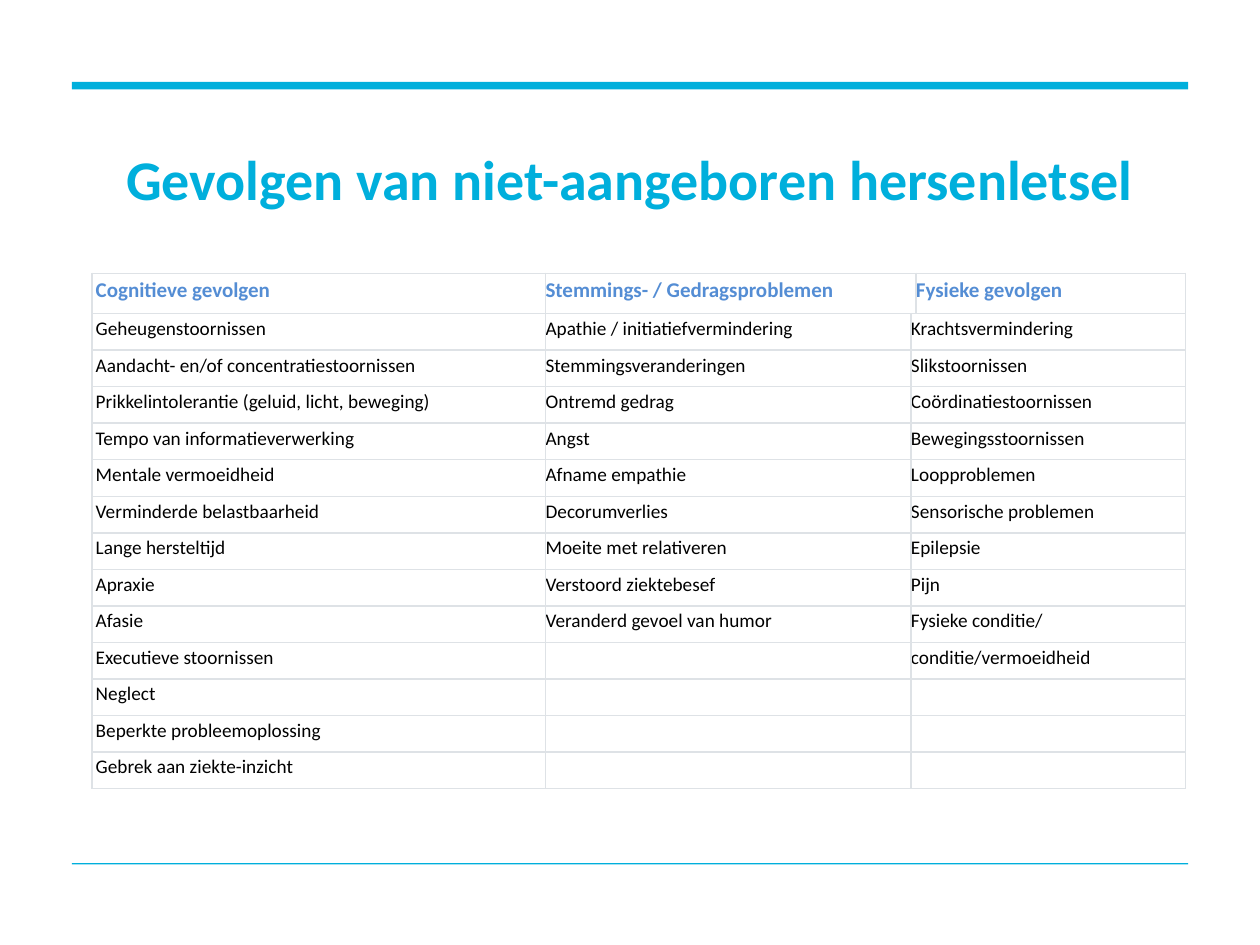
from itertools import zip_longest

from lxml.etree import SubElement
from pptx import Presentation
from pptx.dml.color import RGBColor
from pptx.enum.shapes import MSO_SHAPE as SHAPE
from pptx.enum.text import MSO_ANCHOR as ANCHOR, PP_ALIGN as ALIGN
from pptx.oxml.ns import qn
from pptx.util import Inches, Pt

CYAN = RGBColor(0x00, 0xAF, 0xDC)
BLUE = RGBColor(0x54, 0x8D, 0xD4)
BLACK = RGBColor(0x00, 0x00, 0x00)
WHITE = RGBColor(0xFF, 0xFF, 0xFF)
GRID = RGBColor(0xDE, 0xE2, 0xE6)
FONT = "Calibri"
LEFT, WIDTH = 0.57, 8.86
COL_WIDTHS = [3.6, 2.9, 0.04, 2.14]
HEAD_HEIGHT, ROW_HEIGHT = 0.32, 0.29
INDENT = 0.03

HEADINGS = ["Cognitieve gevolgen", "Stemmings- / Gedragsproblemen", "Fysieke gevolgen"]
COGNITIVE = [
    "Geheugenstoornissen",
    "Aandacht- en/of concentratiestoornissen",
    "Prikkelintolerantie (geluid, licht, beweging)",
    "Tempo van informatieverwerking",
    "Mentale vermoeidheid",
    "Verminderde belastbaarheid",
    "Lange hersteltijd",
    "Apraxie",
    "Afasie",
    "Executieve stoornissen",
    "Neglect",
    "Beperkte probleemoplossing",
    "Gebrek aan ziekte-inzicht",
]
BEHAVIOUR = [
    "Apathie / initiatiefvermindering",
    "Stemmingsveranderingen",
    "Ontremd gedrag",
    "Angst",
    "Afname empathie",
    "Decorumverlies",
    "Moeite met relativeren",
    "Verstoord ziektebesef",
    "Veranderd gevoel van humor",
]
PHYSICAL = [
    "Krachtsvermindering",
    "Slikstoornissen",
    "Coördinatiestoornissen",
    "Bewegingsstoornissen",
    "Loopproblemen",
    "Sensorische problemen",
    "Epilepsie",
    "Pijn",
    "Fysieke conditie/",
    "conditie/vermoeidheid",
]


def add_bar(slide, top, height):
    s = slide.shapes.add_shape(
        SHAPE.RECTANGLE, Inches(LEFT), Inches(top), Inches(WIDTH), Inches(height)
    )
    s.shadow.inherit = False
    s.fill.solid()
    s.fill.fore_color.rgb = CYAN
    s.line.fill.background()


def add_run(p, text, size, color, bold):
    r = p.add_run()
    r.text = text
    r.font.name = FONT
    r.font.size = Pt(size)
    r.font.bold = bold
    r.font.color.rgb = color


def set_title(slide, text):
    s = slide.shapes.title
    s.left, s.top, s.width, s.height = map(Inches, (LEFT, 1.1, WIDTH, 0.58))
    tf = s.text_frame
    tf.margin_left = tf.margin_right = tf.margin_top = tf.margin_bottom = 0
    tf.vertical_anchor = ANCHOR.MIDDLE
    tf.word_wrap = True
    p = tf.paragraphs[0]
    p.alignment = ALIGN.CENTER
    p.line_spacing = Pt(42)
    add_run(p, text, 32, CYAN, True)


def style_cell(cell):
    cell.margin_left = cell.margin_right = cell.margin_top = cell.margin_bottom = 0
    tc_pr = cell._tc.get_or_add_tcPr()
    for side in ("L", "R", "T", "B"):
        ln = SubElement(tc_pr, qn(f"a:ln{side}"), w=str(Pt(1)))
        solid = SubElement(ln, qn("a:solidFill"))
        SubElement(solid, qn("a:srgbClr"), val=str(GRID))
    cell.fill.solid()
    cell.fill.fore_color.rgb = WHITE


def fill_cell(cell, text, size, color, bold):
    p = cell.text_frame.paragraphs[0]
    if text:
        p.line_spacing = 1.15
        p.space_after = Pt(10)
        add_run(p, text, size, color, bold)
    else:
        SubElement(p._p, qn("a:endParaRPr"), sz=str(size * 100))


def add_effects_table(slide):
    rows = [HEADINGS, *zip_longest(COGNITIVE, BEHAVIOUR, PHYSICAL, fillvalue="")]
    heights = [HEAD_HEIGHT] + [ROW_HEIGHT] * len(COGNITIVE)
    frame = slide.shapes.add_table(
        len(rows), len(COL_WIDTHS), Inches(0.73), Inches(2.17),
        Inches(sum(COL_WIDTHS)), Inches(sum(heights)),
    )
    table = frame.table
    table.first_row = table.horz_banding = False
    for col, width in zip(table.columns, COL_WIDTHS):
        col.width = Inches(width)
    for i, (texts, height) in enumerate(zip(rows, heights)):
        table.rows[i].height = Inches(height)
        for cell in table.rows[i].cells:
            style_cell(cell)
        table.cell(i, 0).margin_left = Inches(INDENT)
        head = i == 0
        start = 1 if head else 2
        table.cell(i, start).merge(table.cell(i, start + 1))
        style = (12, BLUE, True) if head else (11, BLACK, False)
        for j, text in zip((0, 1, 3 if head else 2), texts):
            fill_cell(table.cell(i, j), text, *style)


def main():
    prs = Presentation()
    prs.slide_width, prs.slide_height = Inches(10), Inches(7.5)
    slide = prs.slides.add_slide(prs.slide_layouts[5])
    add_bar(slide, 0.65, 0.06)
    add_bar(slide, 6.85, 0.01)
    set_title(slide, "Gevolgen van niet-aangeboren hersenletsel")
    add_effects_table(slide)
    prs.save("out.pptx")


if __name__ == "__main__":
    main()
